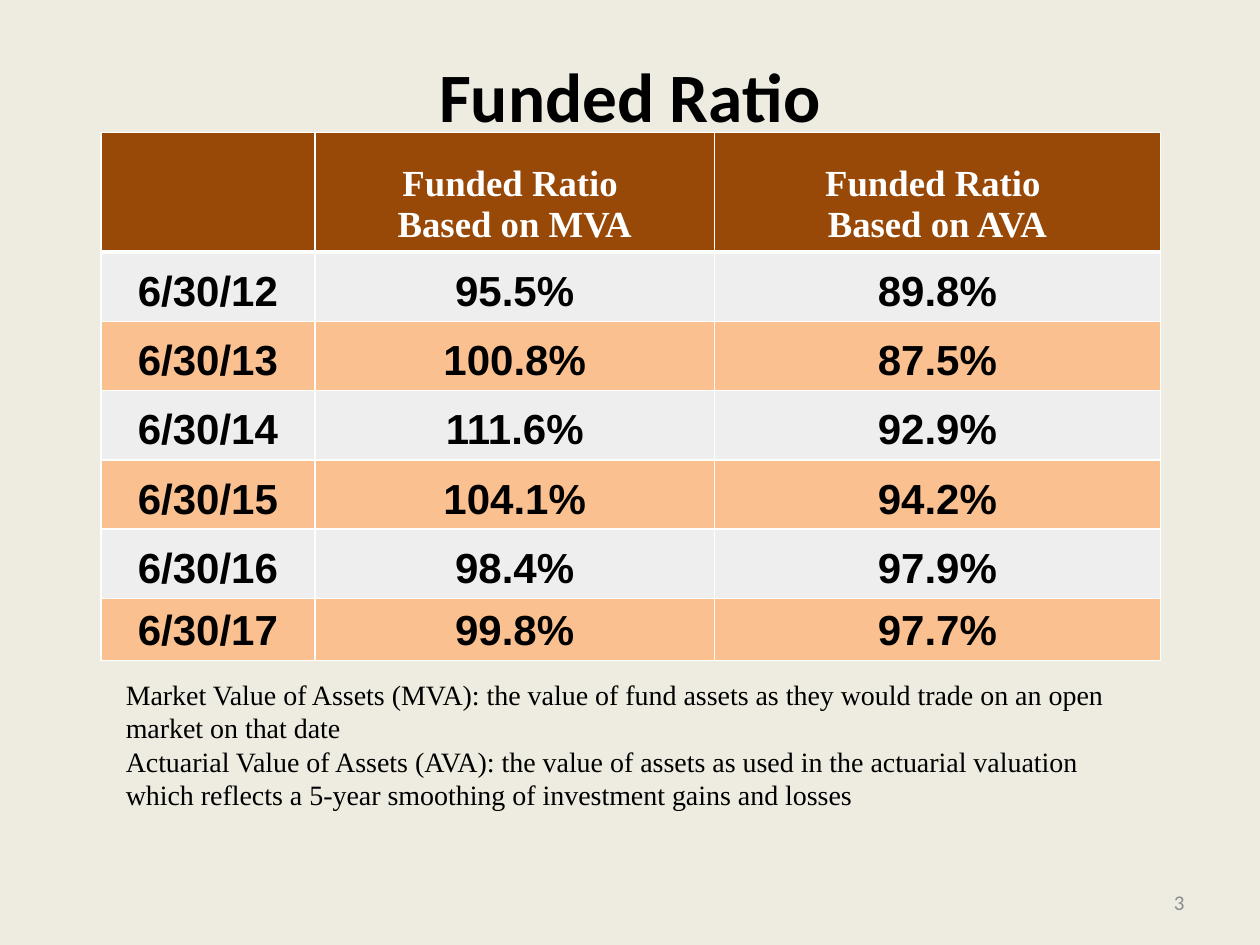
import pptx
import pptx.dml.color
import pptx.enum.text
import pptx.oxml
import pptx.util
from lxml import etree

Inch = pptx.util.Inches
Align = pptx.enum.text.PP_ALIGN
Anchor = pptx.enum.text.MSO_ANCHOR

WIDE, HIGH = 10, 7.5
SERIF = "Times New Roman"
WHITE, BLACK, BROWN = "FFFFFF", "000000", "984807"
BANDS = "EEEEEE", "FAC090"
COLS = 1.7, 3.17, 3.54
ROWS = [0.95] + [0.55] * 5 + [0.47]
HEAD = "", "Funded Ratio \nBased on MVA", "Funded Ratio \nBased on AVA"
DATA = [
    ("6/30/12", "95.5%", "89.8%"),
    ("6/30/13", "100.8%", "87.5%"),
    ("6/30/14", "111.6%", "92.9%"),
    ("6/30/15", "104.1%", "94.2%"),
    ("6/30/16", "98.4%", "97.9%"),
    ("6/30/17", "99.8%", "97.7%"),
]
NOTES = (
    "Market Value of Assets (MVA): the value of fund assets as they would "
    "trade on an open market on that date\n"
    "Actuarial Value of Assets (AVA): the value of assets as used in the "
    "actuarial valuation which reflects a 5-year smoothing of investment "
    "gains and losses"
)


def paint(fmt, tone):
    if hasattr(fmt, "solid"):
        fmt.solid()
        fmt = fmt.fore_color
    fmt.rgb = pptx.dml.color.RGBColor.from_string(tone)


def write(frame, text, face, size, tone, bold=False, align=Align.LEFT):
    frame.text = text
    for para in frame.paragraphs:
        para.alignment = align
        para.font.name = face
        para.font.size = pptx.util.Pt(size)
        para.font.bold = bold
        paint(para.font.color, tone)


def label(slide, area, text, *style, anchor=Anchor.TOP, **more):
    x, y, w, h = area
    box = slide.shapes.add_textbox(
        Inch(x * WIDE), Inch(y * HIGH), Inch(w * WIDE), Inch(h * HIGH)
    )
    box.text_frame.word_wrap = True
    box.text_frame.vertical_anchor = anchor
    write(box.text_frame, text, *style, **more)


def edge(cell, low):
    props = cell._tc.get_or_add_tcPr()
    sides = {"lnL": 1, "lnR": 1, "lnT": 1, "lnB": low}
    for spot, (side, wide) in enumerate(sides.items()):
        line = etree.Element(pptx.oxml.ns.qn("a:" + side), w=str(pptx.util.Pt(wide)))
        fill = etree.SubElement(line, pptx.oxml.ns.qn("a:solidFill"))
        etree.SubElement(fill, pptx.oxml.ns.qn("a:srgbClr"), val=WHITE)
        props.insert(spot, line)


def grid(slide, x, y):
    table = slide.shapes.add_table(
        len(ROWS), len(COLS), Inch(x * WIDE), Inch(y * HIGH),
        Inch(sum(COLS)), Inch(sum(ROWS)),
    ).table
    for col, wide in zip(table.columns, COLS):
        col.width = Inch(wide)
    for row, high in zip(table.rows, ROWS):
        row.height = Inch(high)
    for r, texts in enumerate([HEAD] + DATA):
        top = r == 0
        style = (SERIF, 21, WHITE) if top else ("Arial", 24, BLACK)
        for c, text in enumerate(texts):
            cell = table.cell(r, c)
            cell.vertical_anchor = Anchor.BOTTOM
            cell.margin_top = Inch(0.04)
            write(cell.text_frame, text, *style, bold=True, align=Align.CENTER)
            paint(cell.fill, BROWN if top else BANDS[(r - 1) % 2])
            edge(cell, 3 if top else 1)


def main():
    deck = pptx.Presentation()
    deck.slide_width, deck.slide_height = Inch(WIDE), Inch(HIGH)
    slide = deck.slides.add_slide(deck.slide_layouts[6])
    paint(slide.background.fill, "EEECE1")
    label(slide, (0.72, 0.93, 0.23, 0.05), "3", "Calibri", 12, "8C8C8C",
          anchor=Anchor.MIDDLE, align=Align.RIGHT)
    label(slide, (0, 0.05, 1, 0.1), "Funded Ratio", "Calibri", 39.6, BLACK,
          bold=True, align=Align.CENTER)
    grid(slide, 0.08, 0.14)
    label(slide, (0.09, 0.71, 0.81, 0.16), NOTES, SERIF, 16, BLACK)
    deck.save("out.pptx")


if __name__ == "__main__":
    main()
